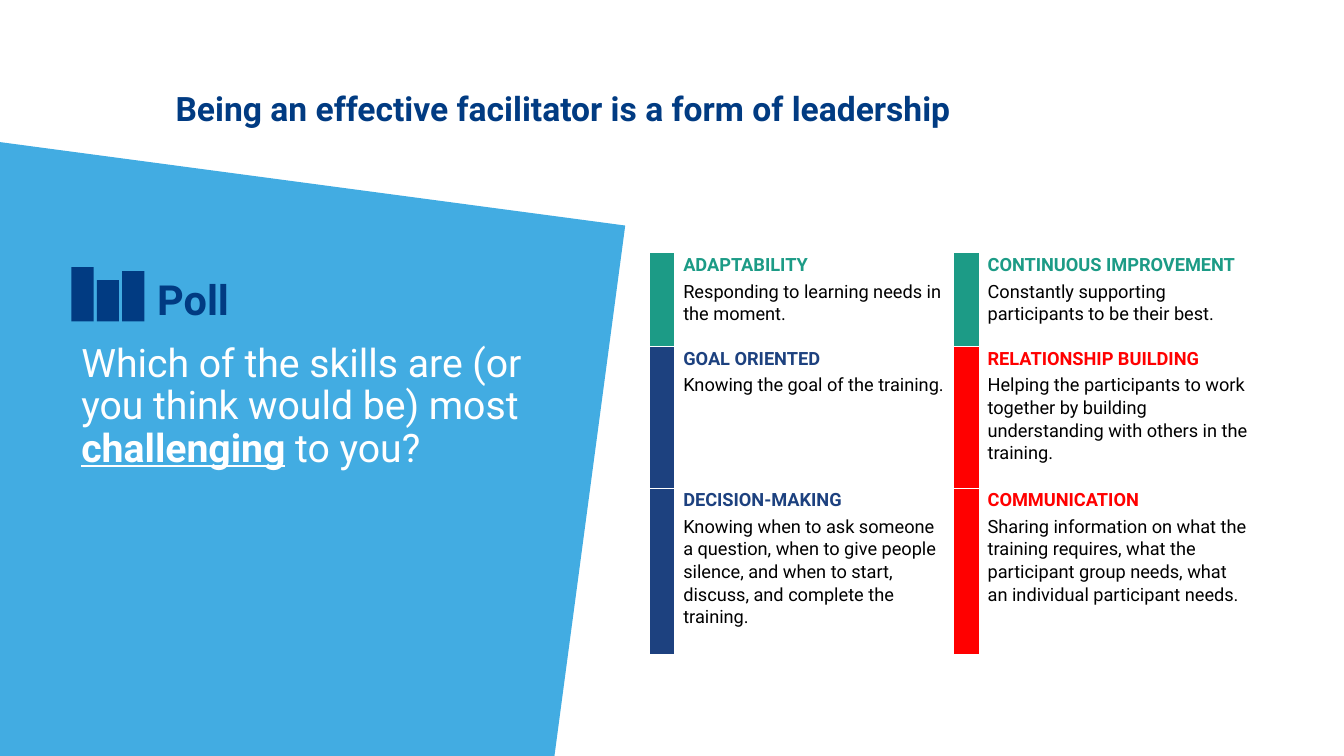
"""Build the poll slide on the skills of an effective facilitator."""
from dataclasses import dataclass
from typing import Any

from lxml import etree
from pptx import Presentation
from pptx.dml.color import RGBColor
from pptx.enum.shapes import MSO_SHAPE
from pptx.enum.text import MSO_ANCHOR, MSO_AUTO_SIZE, PP_ALIGN
from pptx.oxml.ns import qn
from pptx.util import Cm, Pt

RECTANGLE = MSO_SHAPE.RECTANGLE
TOP, MIDDLE = MSO_ANCHOR.TOP, MSO_ANCHOR.MIDDLE
NO_FIT = MSO_AUTO_SIZE.NONE
LEFT = PP_ALIGN.LEFT
TITLE_ONLY = 5
NO_TABLE_STYLE = "{2D5ABB26-0587-4C30-8999-92F81FD0307C}"

COLORS = {
    "navy": "013B82", "sky": "42ACE2", "white": "FFFFFF", "black": "000000",
    "green": "1C9B86", "blue": "1D417F", "red": "FF0000",
}
FORMATS = {
    "title": {"size": Pt(24), "bold": True},
    "poll": {"size": Pt(29.6), "bold": True},
    "question": {"size": Pt(28), "bold": False},
    "emphasis": {"size": Pt(28), "bold": True, "underline": True},
    "skill": {"size": Pt(13), "bold": True},
    "description": {"size": Pt(13), "bold": False},
}
SPACING = {
    "title": {"line_spacing": 0.9, "alignment": LEFT},
    "poll": {"line_spacing": 0.8, "alignment": LEFT},
    "question": {"line_spacing": 0.9, "alignment": LEFT, "space_after": Pt(18)},
    "skill": {"line_spacing": 1.07, "alignment": LEFT, "space_after": Pt(3)},
    "description": {"line_spacing": 1.07, "alignment": LEFT, "space_after": Pt(6)},
}
CELL_MARGINS = {
    "margin_left": Cm(0.23), "margin_right": Cm(0.23),
    "margin_top": Cm(0), "margin_bottom": Cm(0.48),
}

PANEL_CORNERS = [(-5.23, 4.29), (14.76, 4.29), (14.76, 18.83), (-5.23, 20.69)]
PANEL_ROTATION = 7.6
BAR_HEIGHTS = [1.37, 1.04, 1.27]
BAR_LEFT, BAR_STEP, BAR_WIDTH, BAR_BASE = 1.8, 0.64, 0.56, 8.1
COLUMN_WIDTHS = [0.61, 7.06] * 2
ROW_HEIGHTS = [2.36, 3.56, 4.17]


@dataclass(frozen=True)
class Skill:
    """One facilitator skill."""
    name: str
    description: str
    color: str


@dataclass(frozen=True)
class Area:
    """A place on the slide in centimetres."""
    left: float
    top: float
    width: float
    height: float


SKILL_ROWS = [
    [Skill("ADAPTABILITY", "Responding to learning needs in the moment.", "green"),
     Skill("CONTINUOUS IMPROVEMENT",
           "Constantly supporting participants to be their best.", "green")],
    [Skill("GOAL ORIENTED", "Knowing the goal of the training.", "blue"),
     Skill("RELATIONSHIP BUILDING",
           "Helping the participants to work together by building "
           "understanding with others in the training.", "red")],
    [Skill("DECISION-MAKING",
           "Knowing when to ask someone a question, when to give people silence, "
           "and when to start, discuss, and complete the training.", "blue"),
     Skill("COMMUNICATION",
           "Sharing information on what the training requires, what the participant "
           "group needs, what an individual participant needs.", "red")],
]


def rgb(color: str) -> RGBColor:
    """Return the named colour."""
    return RGBColor.from_string(COLORS[color])


def apply(target: Any, values: dict[str, Any]) -> None:
    """Set each format value on the target."""
    for key, value in values.items():
        setattr(target, key, value)


def write(paragraph: Any, kind: str, runs: list[tuple[str, str]], color: str) -> None:
    """Fill a paragraph with runs of text and their formats."""
    apply(paragraph, SPACING[kind])
    for text, style in runs:
        run = paragraph.add_run()
        run.text = text
        run.font.name = "Roboto"
        run.font.color.rgb = rgb(color)
        apply(run.font, FORMATS[style])


def paint(shape: Any, color: str) -> None:
    """Give a shape a flat fill without line or shadow."""
    shape.fill.solid()
    shape.fill.fore_color.rgb = rgb(color)
    shape.line.fill.background()
    shape.shadow.inherit = False


def place_text(holder: Any, area: Area, anchor: Any, kind: str,
               runs: list[tuple[str, str]], color: str) -> None:
    """Place a text holder and write its single paragraph."""
    apply(holder, {"left": Cm(area.left), "top": Cm(area.top),
                   "width": Cm(area.width), "height": Cm(area.height)})
    apply(holder.text_frame, {"word_wrap": True, "auto_size": NO_FIT,
                              "vertical_anchor": anchor})
    write(holder.text_frame.paragraphs[0], kind, runs, color)


def draw_panel(shapes: Any) -> None:
    """Draw the tilted panel behind the question."""
    start, *corners = [(Cm(x), Cm(y)) for x, y in PANEL_CORNERS]
    builder = shapes.build_freeform(*start)
    builder.add_line_segments(corners)
    panel = builder.convert_to_shape()
    panel.rotation = PANEL_ROTATION
    paint(panel, "sky")


def draw_poll_icon(shapes: Any) -> None:
    """Draw the grouped bars beside the poll label."""
    icon = shapes.add_group_shape()
    for index, height in enumerate(BAR_HEIGHTS):
        bar = icon.shapes.add_shape(
            RECTANGLE, Cm(BAR_LEFT + index * BAR_STEP), Cm(BAR_BASE - height),
            Cm(BAR_WIDTH), Cm(height))
        paint(bar, "navy")


def add_border(cell: Any, side: str) -> None:
    """Add a white one-point border to one side of a cell."""
    line = etree.Element(qn(f"a:{side}"), w=str(Pt(1)))
    fill = etree.SubElement(line, qn("a:solidFill"))
    etree.SubElement(fill, qn("a:srgbClr"), val=COLORS["white"])
    cell._tc.get_or_add_tcPr().insert(0, line)


def draw_skills(shapes: Any) -> None:
    """Draw the table of skills with coloured marker cells."""
    frame = shapes.add_table(len(ROW_HEIGHTS), len(COLUMN_WIDTHS), Cm(16.38), Cm(6.38),
                             Cm(sum(COLUMN_WIDTHS)), Cm(sum(ROW_HEIGHTS)))
    table = frame.table
    apply(table, {"first_row": False, "horz_banding": False})
    for style_id in frame._element.iter(qn("a:tableStyleId")):
        style_id.text = NO_TABLE_STYLE
    for column, width in zip(table.columns, COLUMN_WIDTHS):
        column.width = Cm(width)
    for row, height in zip(table.rows, ROW_HEIGHTS):
        row.height = Cm(height)
    for row_index, skills in enumerate(SKILL_ROWS):
        for skill_index, skill in enumerate(skills):
            marker = table.cell(row_index, 2 * skill_index)
            marker.fill.solid()
            marker.fill.fore_color.rgb = rgb(skill.color)
            if row_index < len(SKILL_ROWS) - 1:
                add_border(marker, "lnB")
            if row_index > 0:
                add_border(marker, "lnT")
            entry = table.cell(row_index, 2 * skill_index + 1)
            entry.fill.background()
            apply(entry, CELL_MARGINS)
            content = entry.text_frame
            write(content.paragraphs[0], "skill", [(skill.name, "skill")], skill.color)
            write(content.add_paragraph(), "description",
                  [(skill.description, "description")], "black")


def main() -> None:
    """Build and save the slide."""
    deck = Presentation()
    apply(deck, {"slide_width": Cm(33.87), "slide_height": Cm(19.05)})
    slide = deck.slides.add_slide(deck.slide_layouts[TITLE_ONLY])
    shapes = slide.shapes
    draw_panel(shapes)
    place_text(shapes.add_textbox(0, 0, 0, 0), Area(3.71, 6.96, 4.62, 1.37), MIDDLE,
               "poll", [("Poll", "poll")], "navy")
    place_text(shapes.add_textbox(0, 0, 0, 0), Area(1.8, 8.53, 12.42, 3.68), TOP,
               "question",
               [("Which of the skills are (or you think would be) most ", "question"),
                ("challenging", "emphasis"), (" to you?", "question")], "white")
    draw_poll_icon(shapes)
    place_text(shapes.title, Area(4.17, 2.21, 23.57, 1.3), TOP, "title",
               [("Being an effective facilitator is a form of leadership", "title")], "navy")
    draw_skills(shapes)
    deck.save("out.pptx")


if __name__ == "__main__":
    main()
